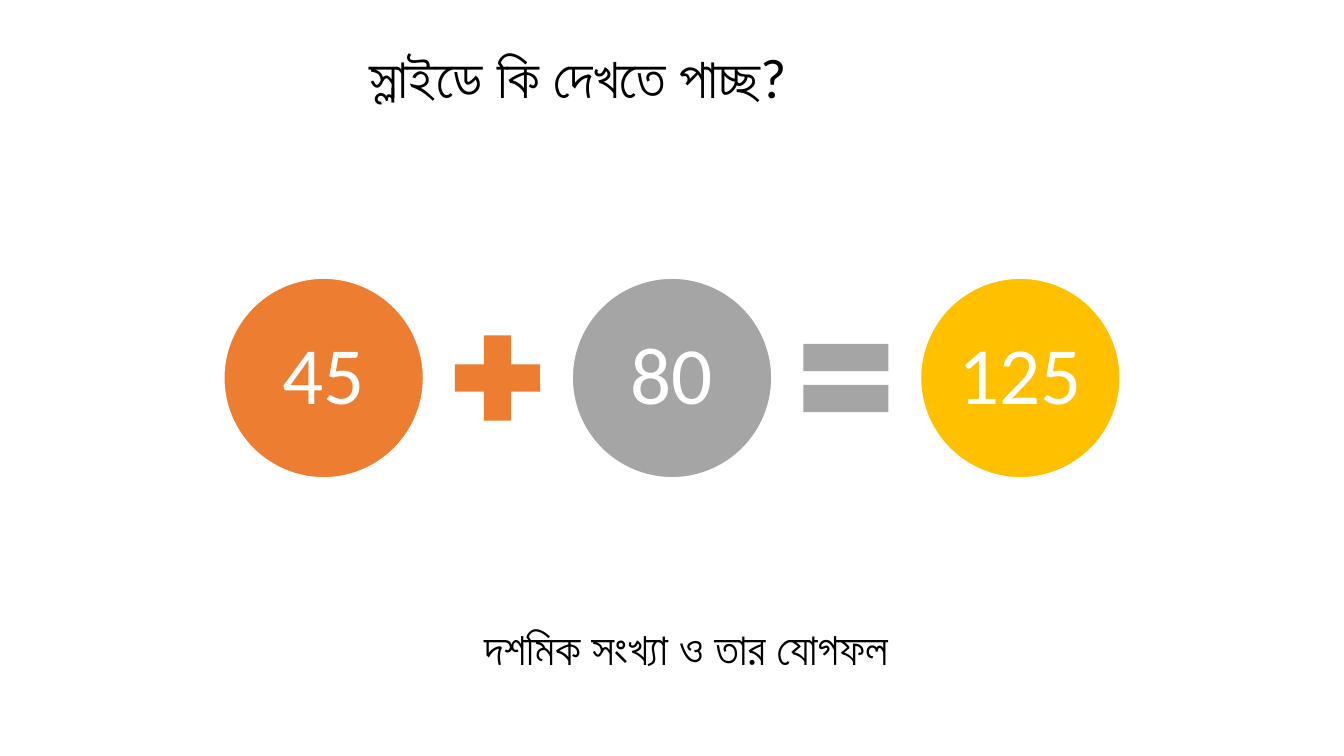
"""Build a slide that shows an addition as circles joined by signs."""
import pptx
import pptx.util
import pptx.dml.color
import pptx.enum.shapes
import pptx.enum.text
from dataclasses import dataclass

Inches = pptx.util.Inches
SHAPES = pptx.enum.shapes.MSO_SHAPE
ALIGN = pptx.enum.text.PP_ALIGN
ANCHOR = pptx.enum.text.MSO_ANCHOR

HEADING = "স্লাইডে কি দেখতে পাচ্ছ?"
CAPTION = "দশমিক সংখ্যা ও তার যোগফল"
TERMS = [
    ("45", "ED7D31", SHAPES.MATH_PLUS),
    ("80", "A5A5A5", SHAPES.MATH_EQUAL),
    ("125", "FFC000", None),
]


@dataclass(frozen=True)
class Theme:
    """Colours, font and type sizes."""
    font: str = "Calibri"
    ink: str = "000000"
    paper: str = "FFFFFF"
    heading: int = 40
    number: int = 58
    caption: int = 32


THEME = Theme()
ROW_LEFT, ROW_MIDDLE = 2.22, 3.75
CIRCLE, SIGN, GAP = 1.98, 1.15, 0.16
STEP = CIRCLE + SIGN + 2 * GAP + 0.005


def rgb(code):
    """Turn a hex code into a colour."""
    return pptx.dml.color.RGBColor.from_string(code)


def write(box, text, size, color, align, anchor=ANCHOR.TOP):
    """Put one styled line of text into a shape."""
    frame = box.text_frame
    frame.text = text
    frame.vertical_anchor = anchor
    para = frame.paragraphs[0]
    para.alignment = align
    font = para.runs[0].font
    font.name = THEME.font
    font.size = pptx.util.Pt(size)
    font.color.rgb = rgb(color)
    return frame


def add_filled(page, kind, left, size, color):
    """Add a flat square-framed shape centred on the row."""
    shape = page.shapes.add_shape(kind, Inches(left), Inches(ROW_MIDDLE - size / 2),
                                  Inches(size), Inches(size))
    shape.shadow.inherit = False
    shape.fill.solid()
    shape.fill.fore_color.rgb = rgb(color)
    shape.line.fill.background()
    return shape


def add_term(page, left, number, color):
    """Add a circle holding a number."""
    circle = add_filled(page, SHAPES.OVAL, left, CIRCLE, color)
    circle.line.color.rgb = rgb(THEME.paper)
    circle.line.width = pptx.util.Pt(1)
    frame = write(circle, number, THEME.number, THEME.paper, ALIGN.CENTER, ANCHOR.MIDDLE)
    frame.word_wrap = False
    frame.margin_left = frame.margin_right = Inches(0.08)
    frame.margin_top = frame.margin_bottom = Inches(0.08)
    frame.paragraphs[0].line_spacing = 0.9


def main():
    """Compose and save the slide."""
    deck = pptx.Presentation()
    deck.slide_width, deck.slide_height = Inches(13.33), Inches(7.5)
    page = deck.slides.add_slide(deck.slide_layouts[5])

    title = page.shapes.title
    title.left, title.top = Inches(3.56), Inches(0.37)
    title.width, title.height = Inches(6.78), Inches(0.77)
    frame = write(title, HEADING, THEME.heading, THEME.ink, ALIGN.LEFT)
    frame.auto_size = pptx.enum.text.MSO_AUTO_SIZE.NONE

    for index, (number, color, sign) in enumerate(TERMS):
        left = ROW_LEFT + index * STEP
        add_term(page, left, number, color)
        if sign is not None:
            add_filled(page, sign, left + CIRCLE + GAP, SIGN, color)

    caption = page.shapes.add_textbox(Inches(3.29), Inches(6.11), Inches(7.03), Inches(0.64))
    write(caption, CAPTION, THEME.caption, THEME.ink, ALIGN.CENTER).word_wrap = True
    deck.save("out.pptx")


if __name__ == "__main__":
    main()
